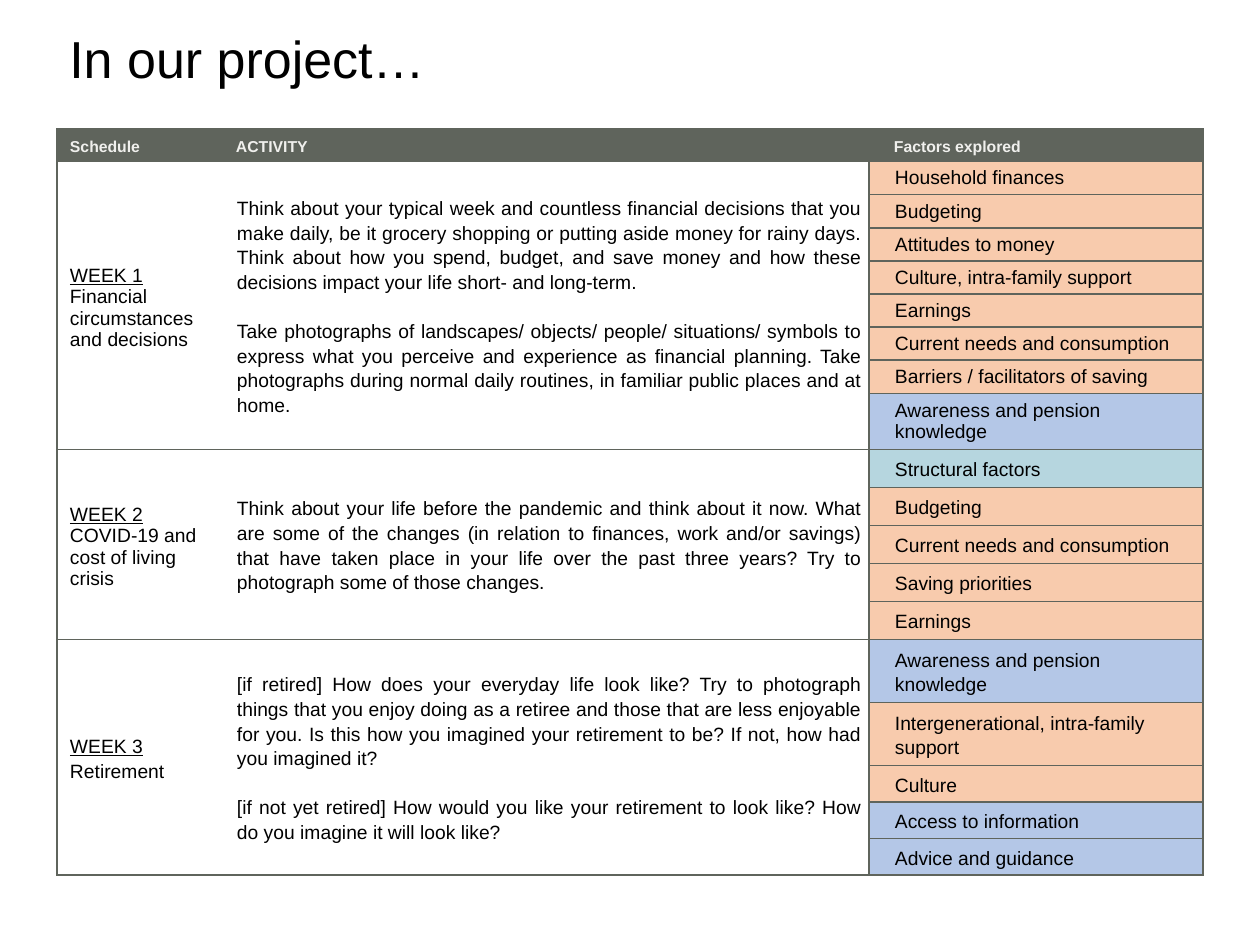
import pptx
import pptx.dml.color
import pptx.enum.text
import pptx.oxml.ns
import pptx.util
from lxml import etree

COLOURS = {
    "grey": "5F645C",
    "heading": "F0F0ED",
    "black": "000000",
    "white": "FFFFFF",
    "personal": "F8CBAD",
    "knowledge": "B4C7E7",
    "structural": "B6D6DF",
}
EMU_PER_PX = 914400 / 126
LEFT, CENTRE_JUSTIFY = pptx.enum.text.PP_ALIGN.LEFT, pptx.enum.text.PP_ALIGN.JUSTIFY

COLUMN_WIDTHS = [154, 658, 334]
HEADINGS = ["Schedule", "ACTIVITY", "Factors explored"]
HEADER_HEIGHT = 31

# Factors are (text, kind, row height)
WEEKS = [
    {
        "name": "WEEK 1",
        "topic": "Financial circumstances and decisions",
        "topic_spacing": 1.0,
        "factor_spacing": 1.0,
        "activity": [
            "Think about your typical week and countless financial decisions that you make "
            "daily, be it grocery shopping or putting aside money for rainy days. Think about "
            "how you spend, budget, and save money and how these decisions impact your life "
            "short- and long-term.",
            "Take photographs of landscapes/ objects/ people/ situations/ symbols to express "
            "what you perceive and experience as financial planning. Take photographs during "
            "normal daily routines, in familiar public places and at home.",
        ],
        "factors": [
            ("Household finances", "personal", 33),
            ("Budgeting", "personal", 32),
            ("Attitudes to money", "personal", 33),
            ("Culture, intra-family support", "personal", 33),
            ("Earnings", "personal", 32),
            ("Current needs and consumption", "personal", 33),
            ("Barriers / facilitators of saving", "personal", 33),
            ("Awareness and pension knowledge", "knowledge", 53),
        ],
    },
    {
        "name": "WEEK 2",
        "topic": "COVID-19 and cost of living crisis",
        "topic_spacing": 1.0,
        "factor_spacing": 1.15,
        "activity": [
            "Think about your life before the pandemic and think about it now. What are some "
            "of the changes (in relation to finances, work and/or savings) that have taken "
            "place in your life over the past three years? Try to photograph some of those "
            "changes.",
        ],
        "factors": [
            ("Structural factors", "structural", 38),
            ("Budgeting", "personal", 38),
            ("Current needs and consumption", "personal", 38),
            ("Saving priorities", "personal", 38),
            ("Earnings", "personal", 38),
        ],
    },
    {
        "name": "WEEK 3",
        "topic": "Retirement",
        "topic_spacing": 1.2,
        "factor_spacing": 1.15,
        "activity": [
            "[if retired] How does your everyday life look like? Try to photograph things that "
            "you enjoy doing as a retiree and those that are less enjoyable for you. Is this "
            "how you imagined your retirement to be? If not, how had you imagined it?",
            "[if not yet retired] How would you like your retirement to look like? How do you "
            "imagine it will look like?",
        ],
        "factors": [
            ("Awareness and pension knowledge", "knowledge", 60),
            ("Intergenerational, intra-family support", "personal", 60),
            ("Culture", "personal", 36),
            ("Access to information", "knowledge", 35),
            ("Advice and guidance", "knowledge", 35),
        ],
    },
]


def px(length):
    return pptx.util.Emu(round(length * EMU_PER_PX))


def colour(name):
    return pptx.dml.color.RGBColor.from_string(COLOURS[name])


class SlideBuilder:
    font_name = "Arial"

    def __init__(self, slide):
        self.slide = slide

    def style(self, paragraph, size, colour_name="black", bold=False, underline=False,
              spacing=1.0, indent=0, align=LEFT, before=0):
        paragraph.alignment = align
        paragraph.line_spacing = spacing
        paragraph.space_before = pptx.util.Pt(before)
        properties = paragraph._p.get_or_add_pPr()
        properties.set("marL", str(px(indent)))
        properties.set("indent", "0")
        for run in paragraph.runs:
            run.font.name = self.font_name
            run.font.size = pptx.util.Pt(size)
            run.font.bold = bold
            run.font.underline = underline
            run.font.color.rgb = colour(colour_name)

    def title(self, text, left, top, width, height):
        shape = self.slide.shapes.add_textbox(px(left), px(top), px(width), px(height))
        frame = shape.text_frame
        frame.word_wrap = True
        frame.vertical_anchor = pptx.enum.text.MSO_ANCHOR.MIDDLE
        frame.text = text
        self.style(frame.paragraphs[0], 29.7, spacing=0.9)

    def table(self, left, top, widths, heights):
        table = self.slide.shapes.add_table(
            len(heights), len(widths), px(left), px(top), px(sum(widths)), px(sum(heights))
        ).table
        table.first_row = table.horz_banding = False
        for column, width in zip(table.columns, widths):
            column.width = px(width)
        for row, height in zip(table.rows, heights):
            row.height = px(height)
        return table

    def cell(self, cell, paragraphs, fill="white", sides="LRTB"):
        """Fill a cell from (text, style) pairs, with grey lines on the given sides."""
        self.borders(cell, sides)
        cell.fill.solid()
        cell.fill.fore_color.rgb = colour(fill)
        cell.vertical_anchor = pptx.enum.text.MSO_ANCHOR.MIDDLE
        cell.margin_left, cell.margin_right = px(13), px(7)
        cell.margin_top = cell.margin_bottom = px(5)
        frame = cell.text_frame
        frame.text = "\n".join(text for text, _ in paragraphs)
        for paragraph, (_, style) in zip(frame.paragraphs, paragraphs):
            self.style(paragraph, **style)

    def borders(self, cell, sides):
        properties = cell._tc.get_or_add_tcPr()
        qn = pptx.oxml.ns.qn
        for side in "LRTB":
            line = etree.SubElement(properties, qn(f"a:ln{side}"), w=str(pptx.util.Pt(1)))
            if side in sides:
                solid = etree.SubElement(line, qn("a:solidFill"))
                etree.SubElement(solid, qn("a:srgbClr"), val=COLOURS["grey"])
            else:
                etree.SubElement(line, qn("a:noFill"))

    def week(self, table, first_row, week):
        last_row = first_row + len(week["factors"]) - 1
        for column in (0, 1):
            table.cell(first_row, column).merge(table.cell(last_row, column))
        self.cell(table.cell(first_row, 0), [
            (week["name"], dict(size=11, underline=True, spacing=1.2)),
            (week["topic"], dict(size=11, spacing=week["topic_spacing"])),
        ], sides="LTB")
        self.cell(table.cell(first_row, 1), [
            (text, dict(size=11, spacing=1.15, indent=13, align=CENTRE_JUSTIFY,
                        before=14 if index else 0))
            for index, text in enumerate(week["activity"])
        ], sides="RTB")
        factor_style = dict(size=11, spacing=week["factor_spacing"], indent=13)
        for row, (text, kind, _) in enumerate(week["factors"], first_row):
            self.cell(table.cell(row, 2), [(text, factor_style)], fill=kind)
        return last_row + 1


def main():
    presentation = pptx.Presentation()
    presentation.slide_width, presentation.slide_height = px(1260), px(945)
    builder = SlideBuilder(presentation.slides.add_slide(presentation.slide_layouts[6]))
    builder.title("In our project…", 57, 29, 1086, 66)

    heights = [HEADER_HEIGHT] + [factor[2] for week in WEEKS for factor in week["factors"]]
    table = builder.table(57, 129, COLUMN_WIDTHS, heights)
    for column, heading in enumerate(HEADINGS):
        style = dict(size=9, colour_name="heading", bold=True, spacing=1.2,
                     indent=12 if column else 0)
        builder.cell(table.cell(0, column), [(heading, style)], fill="grey")
    row = 1
    for week in WEEKS:
        row = builder.week(table, row, week)
    presentation.save("out.pptx")


if __name__ == "__main__":
    main()
